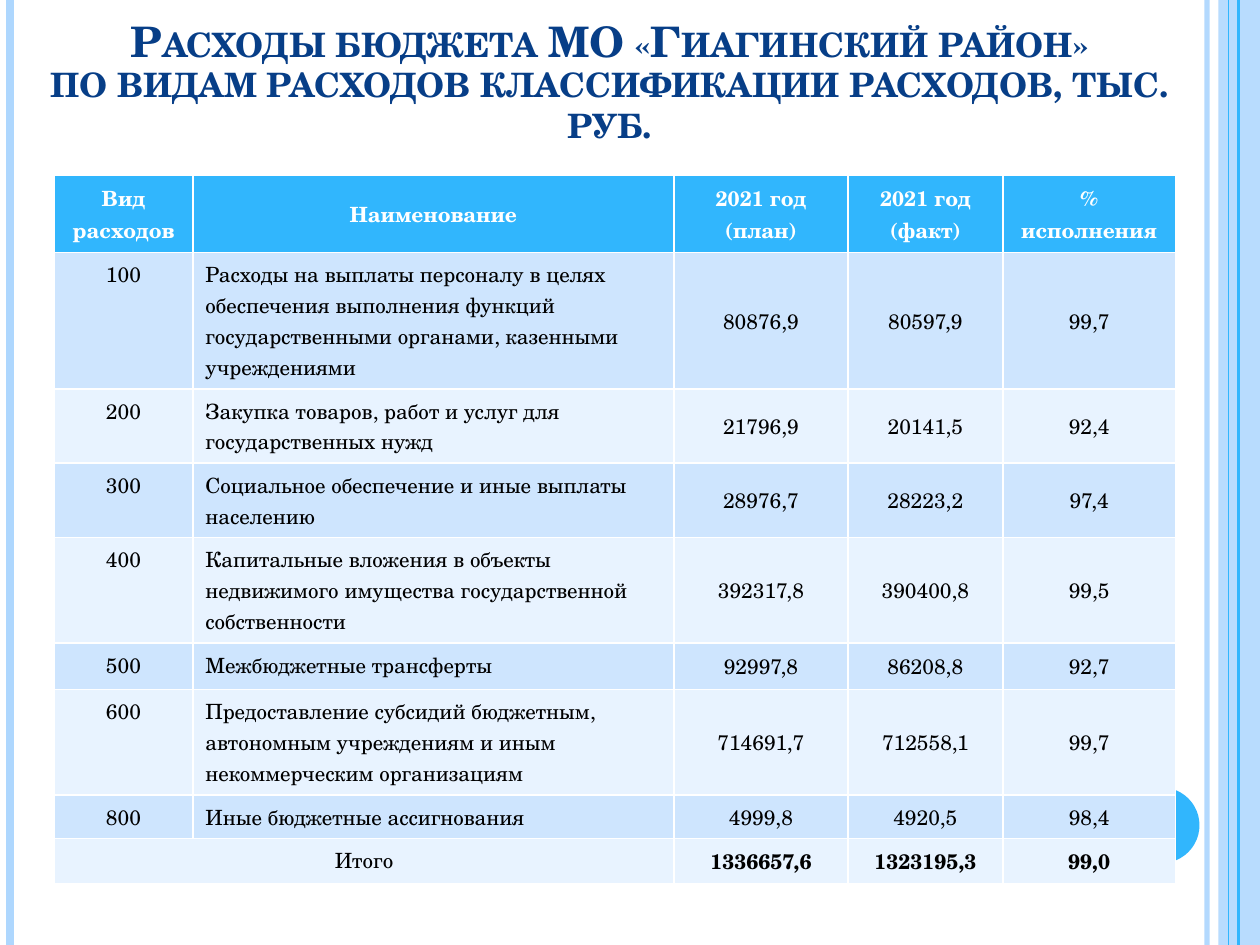
from lxml import etree
from pptx import Presentation
from pptx import util as u
from pptx.dml.color import RGBColor
from pptx.enum import shapes, text
from pptx.oxml.ns import qn

WHITE = RGBColor(0xFF, 0xFF, 0xFF)
BLACK = RGBColor(0, 0, 0)
NAVY = RGBColor(0x07, 0x3E, 0x87)
BLUE = RGBColor(0x31, 0xB6, 0xFD)
PALE = RGBColor(0xAE, 0xD7, 0xFE)
BANDS = [RGBColor(0xE8, 0xF3, 0xFF), RGBColor(0xCE, 0xE5, 0xFE)]
FONT = "TeX Gyre Schola"
MID = text.MSO_ANCHOR.MIDDLE
TOP = text.MSO_ANCHOR.TOP


def write(frame, words, size=12, color=BLACK, bold=False, left=False, space=None, small=False):
    frame.text = words
    for par in frame.paragraphs:
        par.alignment = text.PP_ALIGN.LEFT if left else text.PP_ALIGN.CENTER
        if space:
            par.line_spacing = space
        for run in par.runs:
            font = run.font
            font.name, font.size, font.bold = FONT, u.Pt(size), bold
            font.color.rgb = color
            if small:
                run._r.get_or_add_rPr().set("cap", "small")


def fade(part, percent):
    for clr in part._element.spPr.iter(qn("a:srgbClr")):
        etree.SubElement(clr, qn("a:alpha")).set("val", str(percent * 1000))


prs = Presentation()
prs.slide_width, prs.slide_height = u.Inches(10), u.Inches(7.5)
slide = prs.slides.add_slide(prs.slide_layouts[5])

# Side stripes: band first, then the lines over it
band = slide.shapes.add_shape(
    shapes.MSO_SHAPE.RECTANGLE, u.Inches(9.67), 0, u.Inches(0.33), u.Inches(7.5))
dot = slide.shapes.add_shape(
    shapes.MSO_SHAPE.OVAL, u.Inches(8.92), u.Inches(6.25), u.Inches(0.6), u.Inches(0.6))
for part, color in [(band, PALE), (dot, BLUE)]:
    part.shadow.inherit = False
    part.fill.solid()
    part.fill.fore_color.rgb = color
    part.line.fill.background()
fade(band, 87)

for x, color, width, solid in [(9.58, PALE, 3, 93), (0.08, PALE, 4.5, 100),
                               (9.83, BLUE, 1.5, 100), (9.75, BLUE, 0.75, 100)]:
    line = slide.shapes.add_connector(
        shapes.MSO_CONNECTOR.STRAIGHT, u.Inches(x), 0, u.Inches(x), u.Inches(7.5))
    line.line.color.rgb = color
    line.line.width = u.Pt(width)
    if solid < 100:
        fade(line, solid)
    etree.SubElement(line._element.spPr, qn("a:effectLst"))

# Title
title = slide.shapes.title
title.left, title.top = u.Inches(0.02), u.Inches(0.29)
title.width, title.height = u.Inches(9.64), u.Inches(0.92)
frame = title.text_frame
frame.word_wrap = True
frame.auto_size = text.MSO_AUTO_SIZE.NONE
frame.vertical_anchor = text.MSO_ANCHOR.BOTTOM
write(frame, "Расходы бюджета МО «Гиагинский район»\v"
      "по видам расходов классификации расходов, тыс. руб.",
      size=24, color=NAVY, bold=True, space=0.8, small=True)

# Table of spending by kind
rows = [
    ("Вид расходов", "Наименование", "2021 год\n(план)", "2021 год (факт)", "% исполнения"),
    ("100", "Расходы на выплаты персоналу в целях обеспечения выполнения функций "
     "государственными органами, казенными учреждениями", "80876,9", "80597,9", "99,7"),
    ("200", "Закупка товаров, работ и услуг для государственных нужд",
     "21796,9", "20141,5", "92,4"),
    ("300", "Социальное обеспечение и иные выплаты населению",
     "28976,7", "28223,2", "97,4"),
    ("400", "Капитальные вложения в объекты недвижимого имущества государственной "
     "собственности", "392317,8", "390400,8", "99,5"),
    ("500", "Межбюджетные трансферты", "92997,8", "86208,8", "92,7"),
    ("600", "Предоставление субсидий бюджетным, автономным учреждениям и иным "
     "некоммерческим организациям", "714691,7", "712558,1", "99,7"),
    ("800", "Иные бюджетные ассигнования", "4999,8", "4920,5", "98,4"),
    ("Итого", "", "1336657,6", "1323195,3", "99,0"),
]
widths = [1.1, 3.82, 1.38, 1.23, 1.37]
heights = [0.54, 0.89, 0.5, 0.5, 0.69, 0.37, 0.71, 0.31, 0.31]
last = len(rows) - 1

table = slide.shapes.add_table(
    len(rows), len(widths), u.Inches(0.43), u.Inches(1.39),
    u.Inches(sum(widths)), u.Inches(sum(heights))).table
for col, width in zip(table.columns, widths):
    col.width = u.Inches(width)
for row, height in zip(table.rows, heights):
    row.height = u.Inches(height)
table.cell(last, 0).merge(table.cell(last, 1))

for r, row in enumerate(rows):
    head = r == 0
    for c, words in enumerate(row):
        cell = table.cell(r, c)
        cell.fill.solid()
        cell.fill.fore_color.rgb = BLUE if head else BANDS[r % 2]
        if cell.is_spanned:
            continue
        middle = c == 1 if head else c > 1 and r < last
        cell.vertical_anchor = MID if middle else TOP
        write(cell.text_frame, words, color=WHITE if head else BLACK,
              bold=head or (r == last and c > 1), left=c == 1 and not head)

prs.save("out.pptx")
